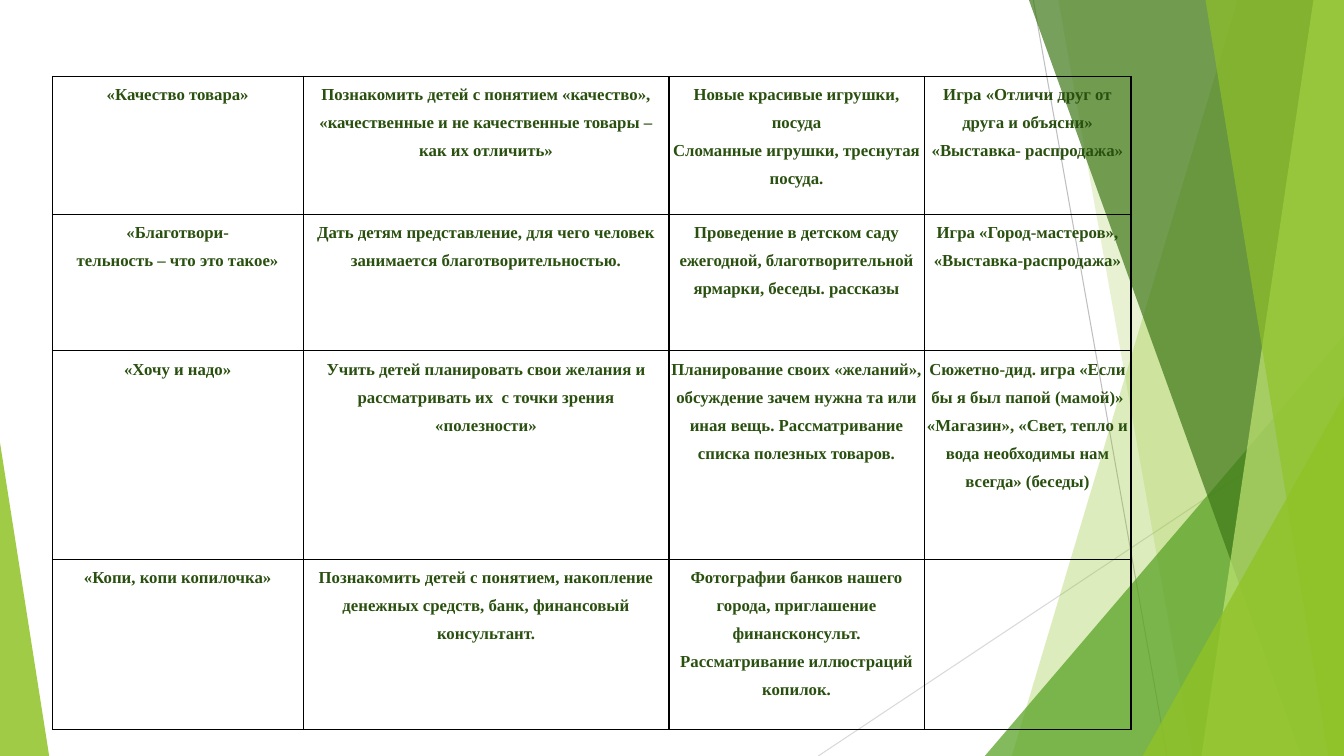
from lxml import etree
from pptx import Presentation
from pptx.dml.color import RGBColor
from pptx.enum.shapes import MSO_CONNECTOR, MSO_SHAPE
from pptx.enum.text import PP_ALIGN
from pptx.oxml import parse_xml
from pptx.oxml.ns import nsdecls, qn
from pptx.util import Cm, Pt

LINE = MSO_CONNECTOR.STRAIGHT
WEDGE = MSO_SHAPE.ISOSCELES_TRIANGLE
CENTER = PP_ALIGN.CENTER

WIDE, HIGH = 33.87, 19.05
FONT = "Times New Roman"
COLORS = {
    "lime": "90C226", "green": "54A021", "dark": "3F7819", "pale": "C0E474",
    "gray": "BFBFBF", "mist": "D9D9D9", "text": "2A5010", "rule": "000000",
}
RAYS = [
    ("gray", 26.04, 0, 29.41, HIGH),
    ("mist", WIDE, 10.24, 20.62, HIGH),
]
BACK = [("lime", 30, 31.19, 25.5), ("lime", 20, 26.67, 30.05)]
FRONT = [
    ("dark", 70, 25.93, 32.79),
    ("pale", 70, 33.1, 30.28),
    ("lime", 65, 30.38, 33.48),
]
COLS = [6.32, 9.22, 6.43, 5.21]
ROWS = [3.48, 3.43, 5.26, 4.29]
TOPICS = [
    ["«Качество товара»",
     "Познакомить детей с понятием «качество», «качественные и не "
     "качественные товары – как их отличить»",
     "Новые красивые игрушки, посуда\nСломанные игрушки, треснутая посуда.",
     "Игра «Отличи друг от друга и объясни» «Выставка- распродажа»"],
    ["«Благотвори-\nтельность – что это такое»",
     "Дать детям представление, для чего человек занимается "
     "благотворительностью.",
     "Проведение в детском саду ежегодной, благотворительной ярмарки, "
     "беседы. рассказы",
     "Игра «Город-мастеров», «Выставка-распродажа»"],
    ["«Хочу и надо»",
     "Учить детей планировать свои желания и рассматривать их  с точки "
     "зрения «полезности»",
     "Планирование своих «желаний», обсуждение зачем нужна та или иная "
     "вещь. Рассматривание списка полезных товаров.",
     "Сюжетно-дид. игра «Если бы я был папой (мамой)» «Магазин», «Свет, "
     "тепло и вода необходимы нам всегда» (беседы)"],
    ["«Копи, копи копилочка»",
     "Познакомить детей с понятием, накопление денежных средств, банк, "
     "финансовый консультант.",
     "Фотографии банков нашего города, приглашение финансконсульт. "
     "Рассматривание иллюстраций копилок.",
     ""],
]


def color(name):
    """Return the named colour."""
    return RGBColor.from_string(COLORS[name])


def paint(shape, name, alpha):
    """Fill a shape with a see-through colour and drop its outline."""
    shape.shadow.inherit = False
    shape.fill.solid()
    shape.fill.fore_color.rgb = color(name)
    shape.line.fill.background()
    tone = shape.fill._xPr.find(qn("a:solidFill"))[0]
    etree.SubElement(tone, qn("a:alpha"), val=str(alpha * 1000))


def add_ray(slide, name, x1, y1, x2, y2):
    """Draw a thin line."""
    ray = slide.shapes.add_connector(LINE, Cm(x1), Cm(y1), Cm(x2), Cm(y2))
    ray.line.color.rgb = color(name)
    ray.line.width = Pt(0.75)
    etree.SubElement(ray._element.spPr, qn("a:effectLst"))


def add_band(slide, name, alpha, top, base):
    """Draw a full-height band that runs to the right edge."""
    pen = slide.shapes.build_freeform(Cm(top), 0)
    ends = [(WIDE, 0), (WIDE, HIGH), (base, HIGH)]
    pen.add_line_segments([(Cm(x), Cm(y)) for x, y in ends], close=True)
    paint(pen.convert_to_shape(), name, alpha)


def add_wedge(slide, name, alpha, left, top, right, peak):
    """Draw a right triangle that stands on the bottom edge."""
    wedge = slide.shapes.add_shape(
        WEDGE, Cm(left), Cm(top), Cm(right - left), Cm(HIGH - top))
    wedge.adjustments[0] = peak
    paint(wedge, name, alpha)


def add_rules(cell):
    """Put a thin rule on each side of a cell."""
    props = cell._tc.get_or_add_tcPr()
    for spot, side in enumerate("LRTB"):
        props.insert(spot, parse_xml(
            f'<a:ln{side} {nsdecls("a")} w="12700"><a:solidFill>'
            f'<a:srgbClr val="{COLORS["rule"]}"/></a:solidFill></a:ln{side}>'))


def fill_cell(cell, text):
    """Write and style one cell."""
    cell.margin_left = cell.margin_right = Cm(0.05)
    cell.margin_top = cell.margin_bottom = 0
    cell.fill.background()
    add_rules(cell)
    cell.text_frame.text = text
    for para in cell.text_frame.paragraphs:
        para.alignment = CENTER
        para.line_spacing = 1.5
        for run in para.runs:
            run.font.name = FONT
            run.font.size = Pt(12)
            run.font.bold = True
            run.font.color.rgb = color("text")


def add_topics(slide):
    """Add the table of topics."""
    table = slide.shapes.add_table(
        len(ROWS), len(COLS), Cm(1.32), Cm(1.93),
        Cm(sum(COLS)), Cm(sum(ROWS))).table
    table.first_row = table.horz_banding = False
    for col, width in zip(table.columns, COLS):
        col.width = Cm(width)
    for row, height, texts in zip(table.rows, ROWS, TOPICS):
        row.height = Cm(height)
        for cell, text in zip(row.cells, texts):
            fill_cell(cell, text)


def main():
    """Build the slide and save it."""
    deck = Presentation()
    deck.slide_width, deck.slide_height = Cm(WIDE), Cm(HIGH)
    slide = deck.slides.add_slide(deck.slide_layouts[6])
    for ray in RAYS:
        add_ray(slide, *ray)
    for band in BACK:
        add_band(slide, *band)
    add_wedge(slide, "green", 72, 24.82, 8.46, WIDE, 1)
    for band in FRONT:
        add_band(slide, *band)
    add_wedge(slide, "lime", 80, 28.8, 9.98, WIDE, 1)
    add_wedge(slide, "lime", 85, 0, 11.15, 1.24, 0)
    add_topics(slide)
    deck.save("out.pptx")


if __name__ == "__main__":
    main()
